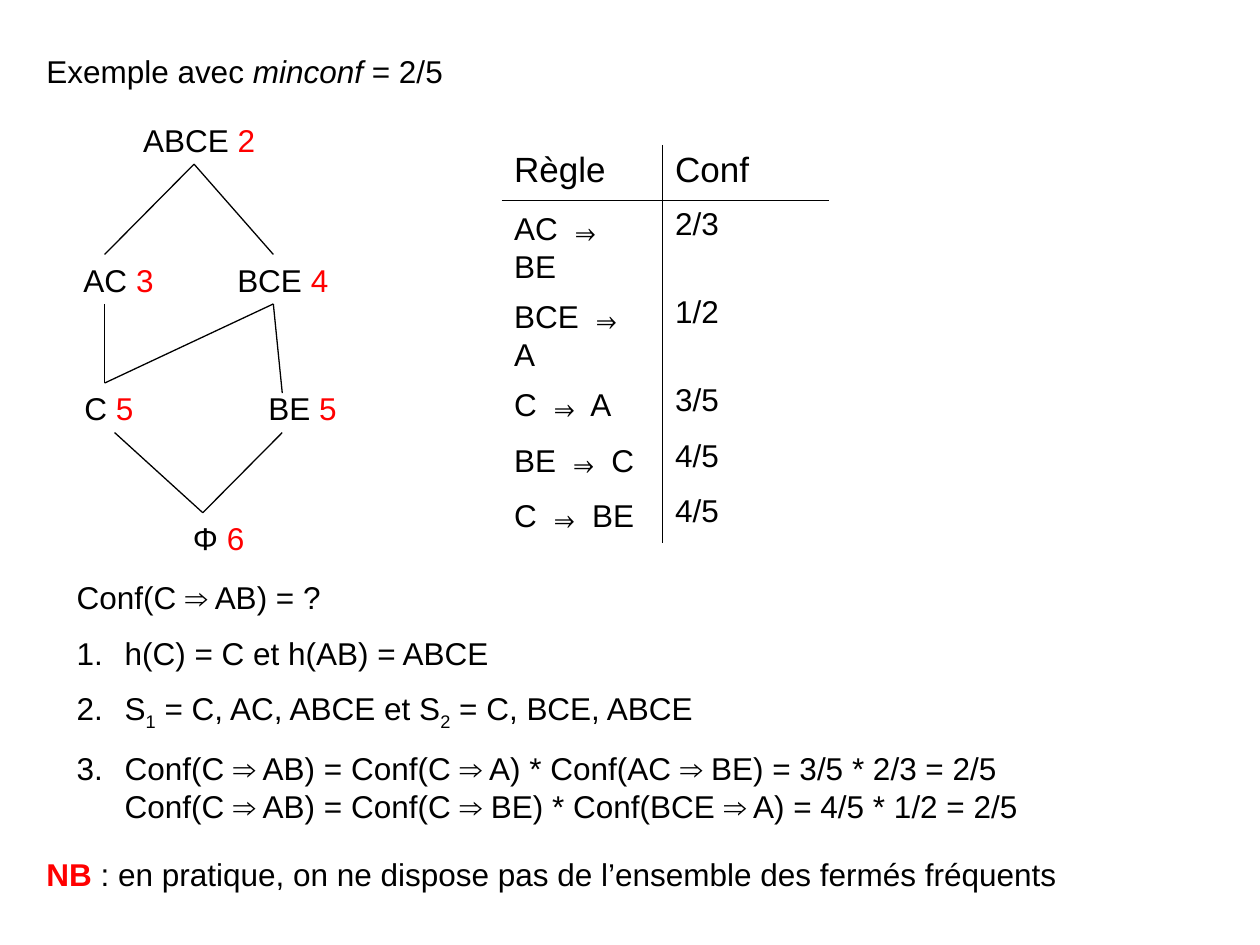
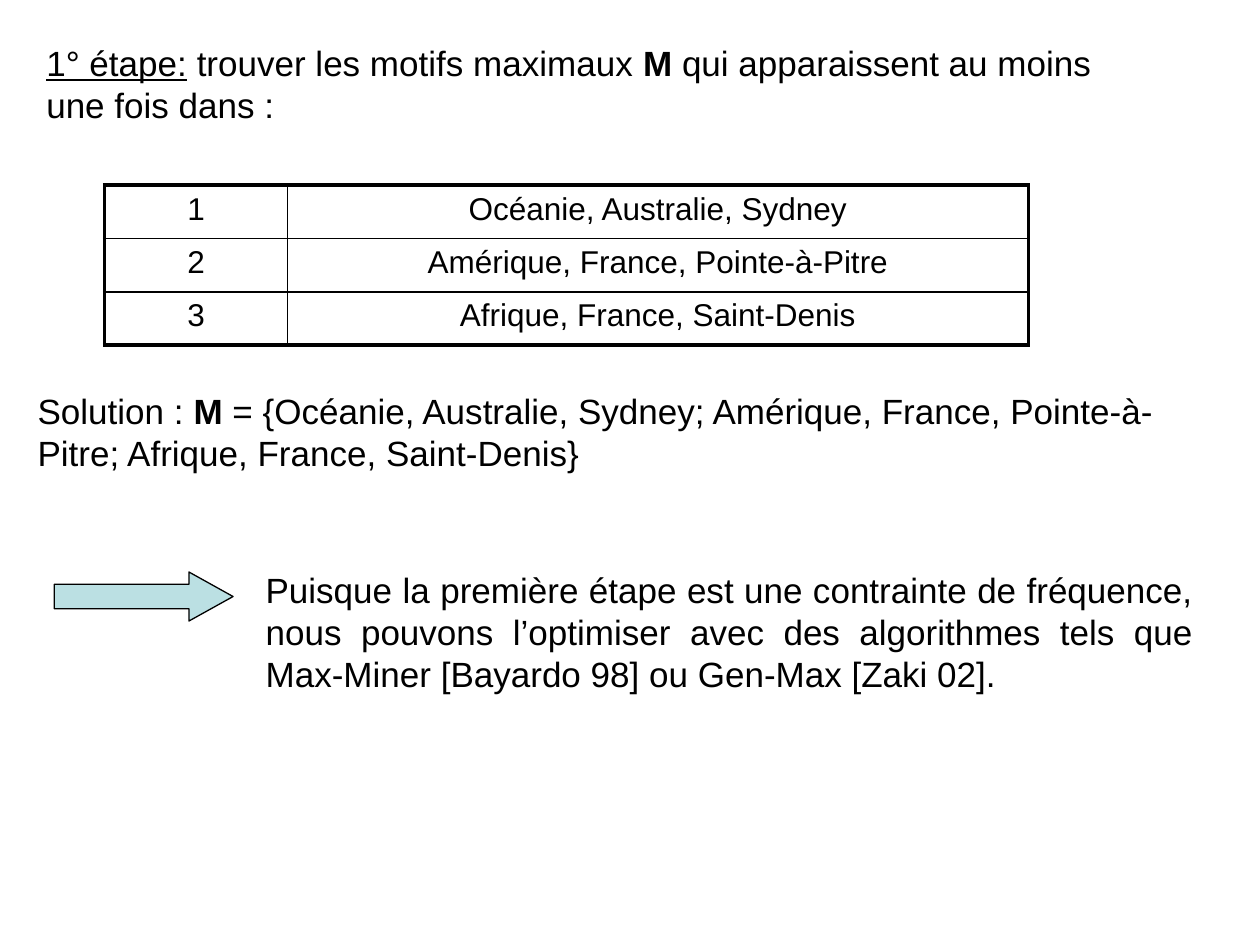
"""Build two slides on association rules: a lattice example and a first mining step."""
from dataclasses import dataclass, field
from typing import Sequence

from lxml.etree import SubElement
from pptx import Presentation
from pptx.dml.color import RGBColor
from pptx.enum.shapes import MSO_CONNECTOR as Connector, MSO_SHAPE as Shape
from pptx.enum.text import PP_ALIGN as Align
from pptx.oxml.ns import qn
from pptx.util import Pt


@dataclass(frozen=True)
class Theme:
    ink: str = "000000"
    accent: str = "FF0000"
    arrow: str = "BBE0E3"
    font: str = "Arial"
    mono: str = "Noto Sans Mono"
    body: float = 18
    large: float = 20
    hairline: float = 0.75
    rule: float = 1
    frame: float = 2.25
    gap: float = 10
    indent: float = 27.4


THEME = Theme()


@dataclass(frozen=True)
class Run:
    text: str
    color: str = THEME.ink
    format: dict = field(default_factory=dict)
    baseline: int = 0


@dataclass(frozen=True)
class Box:
    left: float
    top: float
    width: float
    height: float

    def lengths(self) -> list:
        return [Pt(v) for v in (self.left, self.top, self.width, self.height)]


@dataclass(frozen=True)
class Node:
    label: str
    support: int
    left: float
    top: float
    width: float
    head_x: float
    foot_x: float
    head_drop: float = 0

    def head(self) -> tuple[float, float]:
        return self.head_x, self.top + self.head_drop

    def foot(self) -> tuple[float, float]:
        return self.foot_x, self.top + 28.3


@dataclass(frozen=True)
class Grid:
    left: float
    top: float
    widths: Sequence[float]
    row_height: float
    ruled_rows: Sequence[int]
    outer: float = 0
    align: Align = Align.LEFT


Line = Sequence[Run]

NODES = {n.label: n for n in (
    Node("ABCE", 2, 71.3, 65.5, 85, 110.9, 110.9),
    Node("AC", 3, 36.7, 145.4, 62, 59.8, 59.8),
    Node("BCE", 4, 127.4, 145.4, 68.4, 156.2, 156.2),
    Node("C", 5, 36.7, 218.9, 51, 59.8, 65.5),
    Node("BE", 5, 139, 218.9, 67.7, 161.3, 161.3, 5.7),
    Node("Φ", 6, 99.4, 293, 51, 115.9, 115.9),
)}
EDGES = (("ABCE", "AC"), ("ABCE", "BCE"), ("AC", "C"), ("BCE", "C"),
         ("BCE", "BE"), ("C", "Φ"), ("BE", "Φ"))
RULES = (("AC", "BE", "2/3"), ("BCE", "A", "1/2"), ("C", "A", "3/5"),
         ("BE", "C", "4/5"), ("C", "BE", "4/5"))
PATTERNS = ("Océanie, Australie, Sydney", "Amérique, France, Pointe-à-Pitre",
            "Afrique, France, Saint-Denis")
BOLD = {"bold": True}
SUB = -25000


def write_line(p, runs: Line, size: float, align: Align = Align.LEFT) -> None:
    """Fill a paragraph with formatted runs."""
    p.alignment = align
    for run in runs:
        for i, part in enumerate(run.text.split("\n")):
            if i:
                p.add_line_break()
            r = p.add_run()
            r.text = part
            values = {"size": Pt(size), "name": THEME.font, **run.format}
            for name, value in values.items():
                setattr(r.font, name, value)
            r.font.color.rgb = RGBColor.from_string(run.color)
            if run.baseline:
                r.font._element.set("baseline", str(run.baseline))


def add_text(slide, box: Box, lines: Sequence[Line], size: float = THEME.body,
             align: Align = Align.LEFT):
    """Add a wrapping text box with one paragraph per line."""
    tf = slide.shapes.add_textbox(*box.lengths()).text_frame
    tf.word_wrap = True
    for i, runs in enumerate(lines):
        p = tf.add_paragraph() if i else tf.paragraphs[0]
        if i:
            p.space_before = Pt(THEME.gap)
        write_line(p, runs, size, align)
    return tf


def number_line(p) -> None:
    """Turn a paragraph into a numbered item with a hanging indent."""
    pPr = p._p.get_or_add_pPr()
    pPr.set("marL", str(Pt(THEME.indent)))
    pPr.set("indent", str(-Pt(THEME.indent)))
    SubElement(pPr, qn("a:buFont"), typeface=THEME.font)
    SubElement(pPr, qn("a:buAutoNum"), type="arabicPeriod")


def add_line(slide, start: tuple[float, float], end: tuple[float, float]) -> None:
    """Draw a thin straight line."""
    points = [Pt(v) for v in (*start, *end)]
    sp = slide.shapes.add_connector(Connector.STRAIGHT, *points)
    sp.line.width = Pt(THEME.hairline)
    sp.line.color.rgb = RGBColor.from_string(THEME.ink)
    SubElement(sp._element.spPr, qn("a:effectLst"))


def set_borders(cell, widths: Sequence[float]) -> None:
    """Set left, right, top and bottom borders; zero means none."""
    tcPr = cell._tc.get_or_add_tcPr()
    for side, width in zip("LRTB", widths):
        ln = SubElement(tcPr, qn(f"a:ln{side}"), w=str(Pt(width)))
        if width:
            fill = SubElement(ln, qn("a:solidFill"))
            SubElement(fill, qn("a:srgbClr"), val=THEME.ink)
        else:
            SubElement(ln, qn("a:noFill"))


def add_grid(slide, grid: Grid, rows: Sequence[Sequence[Line]],
             sizes: Sequence[float]) -> None:
    """Add an unfilled table with ruled columns and chosen ruled rows."""
    n_rows, n_cols = len(rows), len(grid.widths)
    box = Box(grid.left, grid.top, sum(grid.widths), grid.row_height * n_rows)
    table = slide.shapes.add_table(n_rows, n_cols, *box.lengths()).table
    table.first_row = table.horz_banding = False
    for column, width in zip(table.columns, grid.widths):
        column.width = Pt(width)

    def row_rule(i: int) -> float:
        """Give the width of the rule above row i."""
        if i in (0, n_rows):
            return grid.outer
        return THEME.rule if i in grid.ruled_rows else 0

    def column_rule(j: int) -> float:
        """Give the width of the rule left of column j."""
        return grid.outer if j in (0, n_cols) else THEME.rule

    for i, (row, size) in enumerate(zip(rows, sizes)):
        table.rows[i].height = Pt(grid.row_height)
        for j, runs in enumerate(row):
            cell = table.cell(i, j)
            set_borders(cell, (column_rule(j), column_rule(j + 1),
                               row_rule(i), row_rule(i + 1)))
            cell.fill.background()
            write_line(cell.text_frame.paragraphs[0], runs, size, grid.align)


def add_lattice(slide) -> None:
    """Draw the lattice of closed sets with their supports."""
    for n in NODES.values():
        runs = [Run(f"{n.label} "), Run(str(n.support), THEME.accent)]
        add_text(slide, Box(n.left, n.top, n.width, 28.8), [runs], align=Align.CENTER)
    for upper, lower in EDGES:
        add_line(slide, NODES[upper].foot(), NODES[lower].head())


def build_example(slide) -> None:
    """Build the confidence example."""
    add_text(slide, Box(19.4, 26, 263.5, 28.8), [[
        Run("Exemple avec"), Run(" minconf", format={"italic": True}), Run(" = 2/5")]])
    add_lattice(slide)
    arrow = Run("⇒", format={"name": THEME.mono})
    rows = [[[Run("Règle")], [Run("Conf")]]]
    rows += [[[Run(f"{a} "), arrow, Run(f" {b}")], [Run(conf)]] for a, b, conf in RULES]
    add_grid(slide, Grid(286.6, 82.8, (92, 95), 31.7, (1,)), rows,
             [THEME.large] + [THEME.body] * len(RULES))
    tf = add_text(slide, Box(36.7, 326.9, 663, 170), [
        [Run("Conf(C ⇒ AB) = ?")],
        [Run("h(C) = C et h(AB) = ABCE")],
        [Run("S"), Run("1", baseline=SUB), Run(" = C, AC, ABCE et S"),
         Run("2", baseline=SUB), Run(" = C, BCE, ABCE")],
        [Run("Conf(C ⇒ AB) = Conf(C ⇒ A) * Conf(AC ⇒ BE) = 3/5 * 2/3 = 2/5\n"
             "Conf(C ⇒ AB) = Conf(C ⇒ BE) * Conf(BCE ⇒ A) = 4/5 * 1/2 = 2/5")],
    ])
    for p in tf.paragraphs[1:]:
        number_line(p)
    add_text(slide, Box(19.4, 485.3, 686, 28.8), [[
        Run("NB ", THEME.accent, BOLD),
        Run(": en pratique, on ne dispose pas de l’ensemble des fermés fréquents")]])


def build_first_step(slide) -> None:
    """Build the search for maximal patterns."""
    maximal = Run("M", format=BOLD)
    add_text(slide, Box(19.4, 20.2, 629.3, 55.4), [[
        Run("1° étape:", format={"underline": True}),
        Run(" trouver les motifs maximaux "), maximal,
        Run(" qui apparaissent au moins une fois dans :")]], THEME.large)
    rows = [[[Run(str(i))], [Run(text)]] for i, text in enumerate(PATTERNS, 1)]
    add_grid(slide, Grid(59.8, 105.8, (104.4, 423.4), 30.5, (1, 2), THEME.frame,
                         Align.CENTER), rows, [THEME.body] * len(rows))
    add_text(slide, Box(14.4, 218.9, 680.4, 55.4), [[
        Run("Solution : "), maximal, Run(f" = {{{'; '.join(PATTERNS)}}}")]], THEME.large)
    sp = slide.shapes.add_shape(Shape.RIGHT_ARROW, *Box(31, 326.9, 102.2, 28).lengths())
    sp.adjustments[0], sp.adjustments[1] = 0.5, 0.9
    sp.shadow.inherit = False
    sp.fill.solid()
    sp.fill.fore_color.rgb = RGBColor.from_string(THEME.arrow)
    sp.line.color.rgb = RGBColor.from_string(THEME.ink)
    sp.line.width = Pt(THEME.hairline)
    add_text(slide, Box(144.7, 321.1, 544.3, 79.2), [[Run(
        "Puisque la première étape est une contrainte de fréquence, nous pouvons "
        "l’optimiser avec des algorithmes tels que Max-Miner [Bayardo 98] ou "
        "Gen-Max [Zaki 02].")]], THEME.large, Align.JUSTIFY)


def main() -> None:
    """Create and save the presentation."""
    prs = Presentation()
    prs.slide_width, prs.slide_height = Pt(720), Pt(540)
    for build in (build_example, build_first_step):
        build(prs.slides.add_slide(prs.slide_layouts[6]))
    prs.save("out.pptx")


if __name__ == "__main__":
    main()
